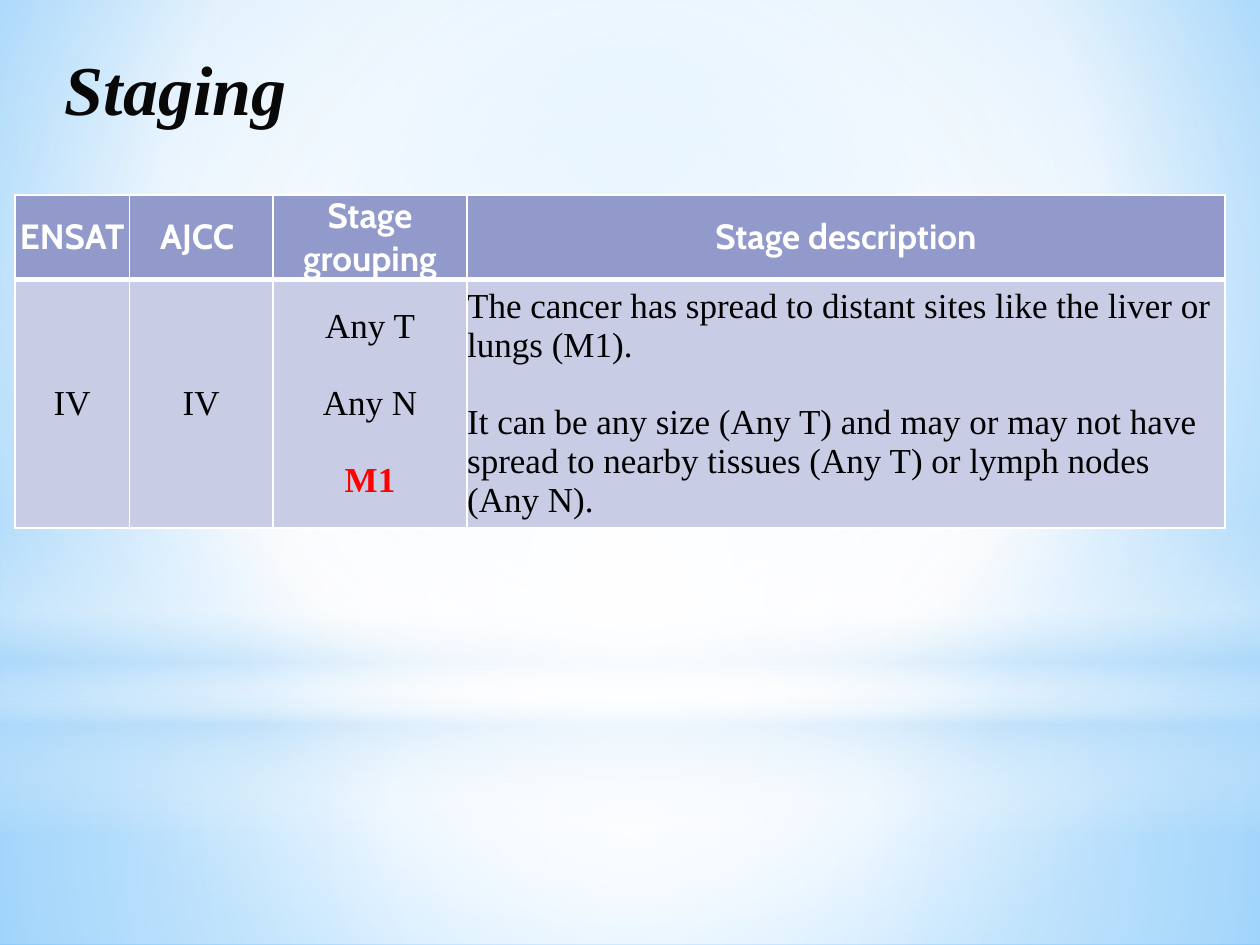
import pptx
import pptx.dml.color
import pptx.enum.shapes
import pptx.enum.text
import pptx.oxml
import pptx.oxml.ns
import pptx.util

Pt = pptx.util.Pt
Shape = pptx.enum.shapes.MSO_SHAPE
Anchor = pptx.enum.text.MSO_ANCHOR
Align = pptx.enum.text.PP_ALIGN

COLORS = {
    "white": "FFFFFF", "black": "000000", "title": "080808", "red": "FF0000",
    "header": "919ACA", "body": "C8CDE5", "sky": "9ED5FF", "deep": "5BB9FF",
    "mist": "B4DCFA",
}
SERIF = "Times New Roman"
CENTER = (50, 50, 50, 50)
NAMESPACE = pptx.oxml.ns.nsdecls("a")
COLUMN_WIDTHS = (65.5, 82, 111, 433)
ROW_HEIGHTS = (37.5, 138)
HEADERS = ("ENSAT", "AJCC ", "Stage grouping", "Stage description")
STAGE = (
    ["IV"],
    ["IV"],
    ["Any T", "Any N", "M1"],
    ["The cancer has spread to distant sites like the liver or lungs (M1).",
     "It can be any size (Any T) and may or may not have spread to nearby "
     "tissues (Any T) or lymph nodes (Any N)."],
)


def rgb(name):
    return pptx.dml.color.RGBColor.from_string(COLORS[name])


def set_gradient(fill, parent, stops, focus=None):
    fill.gradient()
    stop_xml = "".join(
        f'<a:gs pos="{position * 1000}"><a:srgbClr val="{COLORS[color]}">'
        f'<a:alpha val="{opacity * 1000}"/></a:srgbClr></a:gs>'
        for position, color, opacity in stops)
    if focus:
        sides = " ".join(f'{side}="{value * 1000}"' for side, value in zip("ltrb", focus))
        direction = f'<a:path path="circle"><a:fillToRect {sides}/></a:path>'
    else:
        direction = '<a:lin ang="5400000" scaled="0"/>'
    gradient = parent.find(".//" + pptx.oxml.ns.qn("a:gradFill"))
    gradient.getparent().replace(gradient, pptx.oxml.parse_xml(
        f'<a:gradFill {NAMESPACE} rotWithShape="1"><a:gsLst>{stop_xml}</a:gsLst>'
        f'{direction}</a:gradFill>'))


def add_glow(slide, kind, top, height, stops, focus=None):
    shape = slide.shapes.add_shape(kind, 0, Pt(top), Pt(720), Pt(height))
    shape.shadow.inherit = False
    shape.line.fill.background()
    set_gradient(shape.fill, shape.element, stops, focus)


def style_font(font, name, size, color, bold=False, italic=False):
    font.name = name
    font.size = Pt(size)
    font.color.rgb = rgb(color)
    font.bold = bold
    font.italic = italic


def add_title(slide, text):
    frame = slide.shapes.add_textbox(Pt(30), Pt(18), Pt(660), Pt(44)).text_frame
    frame.word_wrap = True
    frame.margin_top = Pt(8)
    frame.text = text
    style_font(frame.paragraphs[0].font, SERIF, 40, "title", True, True)


def set_borders(cell, bottom):
    properties = cell._tc.get_or_add_tcPr()
    widths = (("lnL", 1), ("lnR", 1), ("lnT", 1), ("lnB", bottom))
    for index, (tag, width) in enumerate(widths):
        properties.insert(index, pptx.oxml.parse_xml(
            f'<a:{tag} {NAMESPACE} w="{Pt(width)}"><a:solidFill>'
            f'<a:srgbClr val="{COLORS["white"]}"/></a:solidFill></a:{tag}>'))


def fill_cell(cell, texts, fill, font_name, color, bold, align, bottom=1):
    cell.fill.solid()
    cell.fill.fore_color.rgb = rgb(fill)
    set_borders(cell, bottom)
    cell.vertical_anchor = Anchor.MIDDLE
    cell.margin_left = cell.margin_right = cell.margin_top = cell.margin_bottom = 0
    cell.text = "\n".join(texts)
    for index, paragraph in enumerate(cell.text_frame.paragraphs):
        paragraph.alignment = align
        if index:
            paragraph.space_before = Pt(22)
        style_font(paragraph.font, font_name, 20, color, bold)


def add_staging_table(slide):
    table = slide.shapes.add_table(
        2, 4, Pt(8.5), Pt(111.5), Pt(sum(COLUMN_WIDTHS)), Pt(sum(ROW_HEIGHTS))).table
    for column, width in zip(table.columns, COLUMN_WIDTHS):
        column.width = Pt(width)
    for row, height in zip(table.rows, ROW_HEIGHTS):
        row.height = Pt(height)
    for index, (header, texts) in enumerate(zip(HEADERS, STAGE)):
        fill_cell(table.cell(0, index), [header], "header", "Cabin", "white", True,
                  Align.CENTER, bottom=3)
        align = Align.LEFT if header == "Stage description" else Align.CENTER
        fill_cell(table.cell(1, index), texts, "body", SERIF, "black", False, align)
    metastasis = table.cell(1, 2).text_frame.paragraphs[-1]
    style_font(metastasis.font, SERIF, 20, "red", True)


def main():
    presentation = pptx.Presentation()
    presentation.slide_width = Pt(720)
    presentation.slide_height = Pt(540)
    slide = presentation.slides.add_slide(presentation.slide_layouts[6])
    set_gradient(slide.background.fill, slide.element,
                 [(0, "sky", 100), (60, "white", 100), (100, "deep", 100)],
                 (20, 10, 20, 60))
    add_glow(slide, Shape.RECTANGLE, 402, 138,
             [(0, "white", 91), (37, "white", 76), (100, "mist", 79)], CENTER)
    add_glow(slide, Shape.RECTANGLE, 0, 402,
             [(0, "white", 89), (48, "white", 62), (100, "mist", 79)], CENTER)
    add_glow(slide, Shape.RECTANGLE, 297, 180,
             [(0, "white", 0), (29, "white", 30), (45, "mist", 40),
              (55, "white", 26), (65, "mist", 60), (100, "white", 0)])
    add_glow(slide, Shape.OVAL, 126, 402,
             [(0, "white", 100), (56, "white", 0)], CENTER)
    add_title(slide, "Staging")
    add_staging_table(slide)
    presentation.save("out.pptx")


if __name__ == "__main__":
    main()
